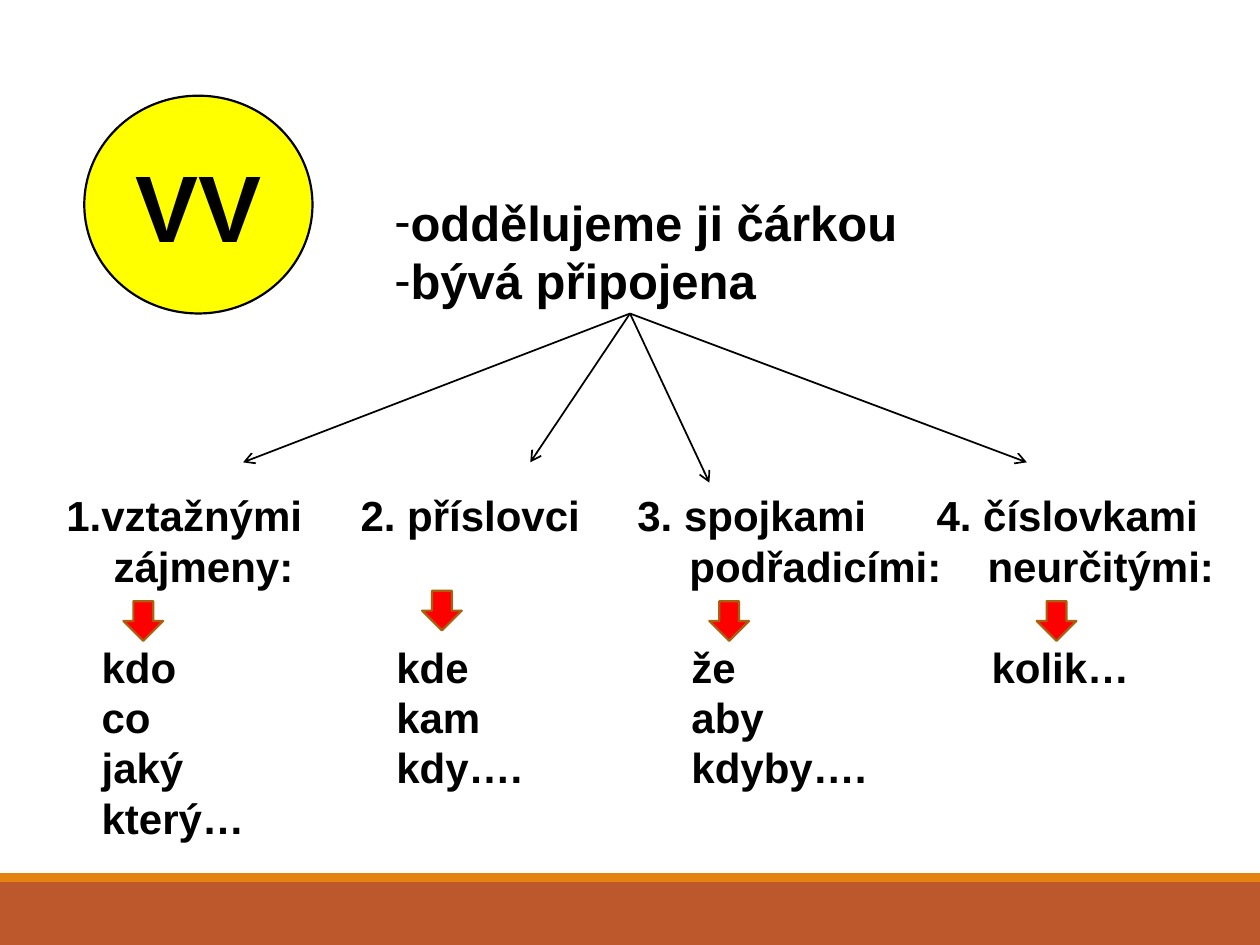
from lxml.etree import SubElement
from pptx import Presentation
from pptx.dml.color import RGBColor
from pptx.enum.shapes import MSO_CONNECTOR, MSO_SHAPE
from pptx.enum.text import MSO_ANCHOR, PP_ALIGN
from pptx.oxml.ns import qn
from pptx.util import Cm, Pt

BLACK = RGBColor(0, 0, 0)
YELLOW = RGBColor(255, 255, 0)
RED = RGBColor(255, 0, 0)
BROWN = RGBColor(0xA9, 0x61, 0x0D)
RUST = RGBColor(0xBD, 0x58, 0x2C)
AMBER = RGBColor(0xE4, 0x83, 0x12)

BANDS = [(17.78, 1.27, RUST), (17.6, 0.18, AMBER)]
NOTES = ["oddělujeme ji čárkou", "bývá připojena"]
HEADS = (5.93, 11.51, 17.54)
TAILS = (0.95, 12.56, 18.57)
WORDS = (0.71, 6.65, 12.6, 18.65)
ROWS = [
    (HEADS, "1.vztažnými\t2. příslovci\t3. spojkami\t4. číslovkami"),
    (TAILS, "\tzájmeny:\tpodřadicími:\tneurčitými:"),
    (WORDS, "\tkdo\tkde\tže\tkolik…"),
    (WORDS, "\tco\tkam\taby"),
    (WORDS, "\tjaký\tkdy….\tkdyby…."),
    (WORDS, "\tkterý…"),
]
GAP_ROW = 2
HUB = (12.7, 6.32)
TIPS = [(4.9, 9.32), (10.69, 9.32), (14.3, 9.73), (20.7, 9.32)]
ARROWS = [(2.49, 12.12), (8.51, 11.91), (14.3, 12.12), (20.9, 12.12)]
SIDE = 0.8


def add_form(slide, kind, box, fill, line=None):
    form = slide.shapes.add_shape(kind, *map(Cm, box))
    form.shadow.inherit = False
    form.fill.solid()
    form.fill.fore_color.rgb = fill
    if line is None:
        form.line.fill.background()
    else:
        form.line.color.rgb = line
        form.line.width = Pt(1.25)
    return form


def set_font(para, size):
    font = para.font
    font.name = "Arial"
    font.size = Pt(size)
    font.bold = True
    font.color.rgb = BLACK


def add_text(slide, box, lines, size):
    frame = slide.shapes.add_textbox(*map(Cm, box)).text_frame
    frame.word_wrap = True
    paras = [frame.paragraphs[0]]
    paras += [frame.add_paragraph() for _ in lines[1:]]
    for para, line in zip(paras, lines):
        para.text = line
        para.line_spacing = Pt(size * 1.2)
    return paras


def add_dash(para):
    props = para._p.get_or_add_pPr()
    props.set("marL", "0")
    props.set("indent", "0")
    SubElement(props, qn("a:buFont"), typeface="Arial")
    SubElement(props, qn("a:buChar"), char="-")


def add_tabs(para, stops):
    tabs = SubElement(para._p.get_or_add_pPr(), qn("a:tabLst"))
    for stop in stops:
        SubElement(tabs, qn("a:tab"), pos=str(int(Cm(stop))), algn="l")


def add_ray(slide, tip):
    ray = slide.shapes.add_connector(
        MSO_CONNECTOR.STRAIGHT, *map(Cm, HUB + tip))
    ray.line.color.rgb = BLACK
    ray.line.width = Pt(1)
    SubElement(ray.line._get_or_add_ln(), qn("a:tailEnd"), type="arrow")
    SubElement(ray._element.spPr, qn("a:effectLst"))


def main():
    deck = Presentation()
    deck.slide_width, deck.slide_height = Cm(25.4), Cm(19.05)
    slide = deck.slides.add_slide(deck.slide_layouts[6])

    for top, height, fill in BANDS:
        add_form(slide, MSO_SHAPE.RECTANGLE, (0, top, 25.4, height), fill)

    disc = add_form(
        slide, MSO_SHAPE.OVAL, (1.7, 1.93, 4.6, 4.39), YELLOW, BLACK)
    disc.text_frame.vertical_anchor = MSO_ANCHOR.MIDDLE
    label = disc.text_frame.paragraphs[0]
    label.text = "VV"
    label.alignment = PP_ALIGN.CENTER
    set_font(label, 54)

    for para in add_text(slide, (7.7, 3.75, 10.77, 3.84), NOTES, 28):
        add_dash(para)
        set_font(para, 28)

    lines = [line for _, line in ROWS]
    paras = add_text(slide, (1.09, 9.75, 23.83, 7.44), lines, 24)
    paras[GAP_ROW].space_before = Pt(28.8)
    for para, (stops, _) in zip(paras, ROWS):
        add_tabs(para, stops)
        set_font(para, 24)

    for tip in TIPS:
        add_ray(slide, tip)
    for left, top in ARROWS:
        add_form(slide, MSO_SHAPE.DOWN_ARROW,
                 (left, top, SIDE, SIDE), RED, BROWN)

    deck.save("out.pptx")


if __name__ == "__main__":
    main()
